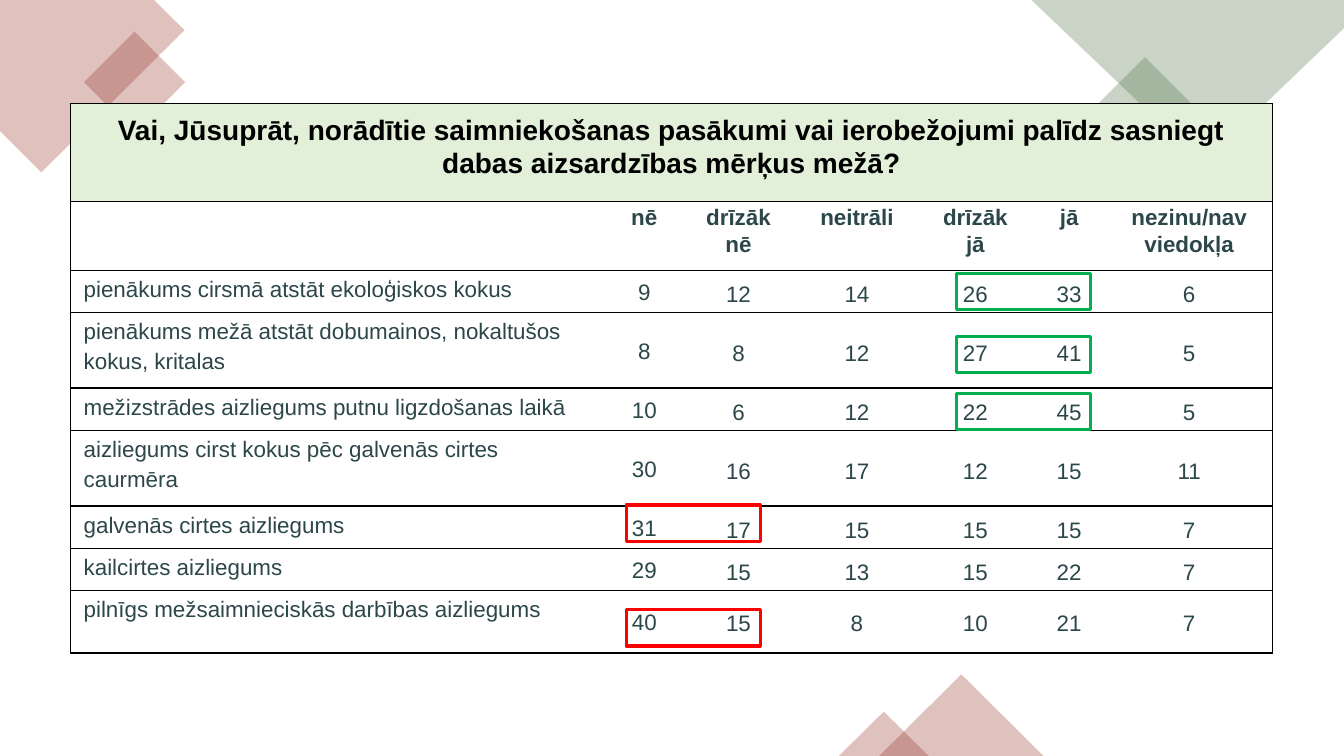
from dataclasses import dataclass

from lxml import etree
from pptx import Presentation
from pptx.dml.color import RGBColor
from pptx.enum.shapes import MSO_SHAPE
from pptx.enum.text import MSO_ANCHOR, PP_ALIGN
from pptx.oxml.ns import qn
from pptx.util import Inches, Pt

RECT, TRIANGLE = MSO_SHAPE.RECTANGLE, MSO_SHAPE.ISOSCELES_TRIANGLE
LEFT, CENTER = PP_ALIGN.LEFT, PP_ALIGN.CENTER
TOP, MIDDLE = MSO_ANCHOR.TOP, MSO_ANCHOR.MIDDLE


@dataclass(frozen=True)
class Theme:
    font: str = "Arial"
    title_size: int = 20
    body_size: int = 16
    black: str = "000000"
    text: str = "2C4749"
    title_fill: str = "E2EFD9"
    rust: str = "96332A"
    moss: str = "4F7348"
    agree: str = "00B050"
    disagree: str = "FF0000"
    decor_alpha: int = 30
    border_width: float = 1
    highlight_width: float = 2.25


T = Theme()

TITLE = ("Vai, Jūsuprāt, norādītie saimniekošanas pasākumi vai ierobežojumi "
         "palīdz sasniegt dabas aizsardzības mērķus mežā?")
ANSWERS = ["nē", "drīzāk nē", "neitrāli", "drīzāk jā", "jā", "nezinu/nav viedokļa"]
MEASURES = [
    ("pienākums cirsmā atstāt ekoloģiskos kokus", (9, 12, 14, 26, 33, 6)),
    ("pienākums mežā atstāt dobumainos, nokaltušos kokus, kritalas", (8, 8, 12, 27, 41, 5)),
    ("mežizstrādes aizliegums putnu ligzdošanas laikā", (10, 6, 12, 22, 45, 5)),
    ("aizliegums cirst kokus pēc galvenās cirtes caurmēra", (30, 16, 17, 12, 15, 11)),
    ("galvenās cirtes aizliegums", (31, 17, 15, 15, 15, 7)),
    ("kailcirtes aizliegums", (29, 15, 13, 15, 22, 7)),
    ("pilnīgs mežsaimnieciskās darbības aizliegums", (40, 15, 8, 10, 21, 7)),
]
TABLE_AT = (0.7, 1.03)
COLS = [5.32, 0.74, 1.13, 1.22, 1.13, 0.73, 1.65]
ROWS = [0.97, 0.68, 0.42, 0.75, 0.42, 0.75, 0.42, 0.42, 0.62]

TITLE_INSETS = (0.18, 0.09, 0.18, 0.09)
HEAD_INSETS = (0.14, 0.02, 0.14, 0)
BODY_INSETS = (0.13, 0.02, 0.13, 0)
EVEN_INSETS = (0.13, 0.13, 0.13, 0.13)
TIGHT, LOOSE = 1.07, 1.2

CORNER_LEFT = [(1.53, 0), (0, 0), (0, 1.3), (0.41, 1.71), (1.83, 0.3)]
CORNER_RIGHT = [(13.33, 0), (10.23, 0), (11.93, 1.62), (13.33, 0.28)]
DIAMONDS = [(0.98, 0.46, 0.71, T.rust), (10.98, 0.72, 0.75, T.moss)]
PEAKS = [(8.72, 6.69, 1.63, 0.81), (8.32, 7.06, 0.89, 0.44)]

HIGHLIGHT_SIZE = (1.33, 0.36)
HIGHLIGHTS = [
    (9.49, (2.71, 3.34, 3.9), T.agree),
    (6.21, (6.05, 5.01), T.disagree),
]


def rgb(value):
    return RGBColor.from_string(value)


def tint(sp, color):
    sp.shadow.inherit = False
    sp.line.fill.background()
    sp.fill.solid()
    sp.fill.fore_color.rgb = rgb(color)
    clr = sp._element.spPr.find(qn("a:solidFill"))[0]
    etree.SubElement(clr, qn("a:alpha")).set("val", str(T.decor_alpha * 1000))


def add_polygon(s, points, color):
    corners = [(Inches(x), Inches(y)) for x, y in points]
    builder = s.shapes.build_freeform(*corners[0])
    builder.add_line_segments(corners[1:], close=True)
    tint(builder.convert_to_shape(), color)


def add_preset(s, kind, *box):
    return s.shapes.add_shape(kind, *map(Inches, box))


def add_decor(s):
    add_polygon(s, CORNER_LEFT, T.rust)
    for x, y, side, color in DIAMONDS:
        sp = add_preset(s, RECT, x, y, side, side)
        sp.rotation = 315
        tint(sp, color)
    add_polygon(s, CORNER_RIGHT, T.moss)
    for box in PEAKS:
        tint(add_preset(s, TRIANGLE, *box), T.rust)


def set_borders(cell, first, last):
    tcPr = cell._tc.get_or_add_tcPr()
    sides = [("lnL", first), ("lnR", last), ("lnT", True), ("lnB", True)]
    for i, (side, visible) in enumerate(sides):
        ln = etree.Element(qn(f"a:{side}"), w=str(Pt(T.border_width)))
        if visible:
            fill = etree.SubElement(ln, qn("a:solidFill"))
            etree.SubElement(fill, qn("a:srgbClr")).set("val", T.black)
        else:
            etree.SubElement(ln, qn("a:noFill"))
        tcPr.insert(i, ln)


def write(cell, text, insets, spacing, align=CENTER, anchor=TOP,
          bold=False, size=T.body_size, color=T.text):
    (cell.margin_left, cell.margin_top,
     cell.margin_right, cell.margin_bottom) = map(Inches, insets)
    cell.vertical_anchor = anchor
    p = cell.text_frame.paragraphs[0]
    p.alignment = align
    p.line_spacing = spacing
    p.space_after = Pt(1)
    r = p.add_run()
    r.text = text
    r.font.name = T.font
    r.font.size = Pt(size)
    r.font.bold = bold
    r.font.color.rgb = rgb(color)


def add_survey(s):
    frame = s.shapes.add_table(len(ROWS), len(COLS), *map(Inches, (*TABLE_AT, sum(COLS), sum(ROWS))))
    table = frame.table
    table.first_row = table.horz_banding = False
    for col, width in zip(table.columns, COLS):
        col.width = Inches(width)
    for row, height in zip(table.rows, ROWS):
        row.height = Inches(height)

    last_col, last_row = len(COLS) - 1, len(ROWS) - 1
    for i in range(len(ROWS)):
        for j in range(len(COLS)):
            cell = table.cell(i, j)
            cell.fill.background()
            set_borders(cell, j == 0, j == last_col or i == 0)

    title = table.cell(0, 0)
    title.merge(table.cell(0, last_col))
    title.fill.solid()
    title.fill.fore_color.rgb = rgb(T.title_fill)
    write(title, TITLE, TITLE_INSETS, TIGHT, bold=True, size=T.title_size, color=T.black)

    for j, answer in enumerate(ANSWERS, 1):
        write(table.cell(1, j), answer, HEAD_INSETS, TIGHT, bold=True)

    for i, (measure, shares) in enumerate(MEASURES, 2):
        write(table.cell(i, 0), measure, BODY_INSETS, LOOSE, align=LEFT)
        for j, share in enumerate(shares, 1):
            insets = BODY_INSETS
            if i == last_row:
                insets = EVEN_INSETS if j == 1 else HEAD_INSETS
            spacing = TIGHT if j == 1 or i == last_row else LOOSE
            write(table.cell(i, j), str(share), insets, spacing, anchor=MIDDLE)


def add_highlights(s):
    for x, tops, color in HIGHLIGHTS:
        for y in tops:
            sp = add_preset(s, RECT, x, y, *HIGHLIGHT_SIZE)
            sp.shadow.inherit = False
            sp.fill.background()
            sp.line.color.rgb = rgb(color)
            sp.line.width = Pt(T.highlight_width)


def main():
    prs = Presentation()
    prs.slide_width, prs.slide_height = Inches(13.33), Inches(7.5)
    s = prs.slides.add_slide(prs.slide_layouts[6])
    add_decor(s)
    add_survey(s)
    add_highlights(s)
    prs.save("out.pptx")


if __name__ == "__main__":
    main()
